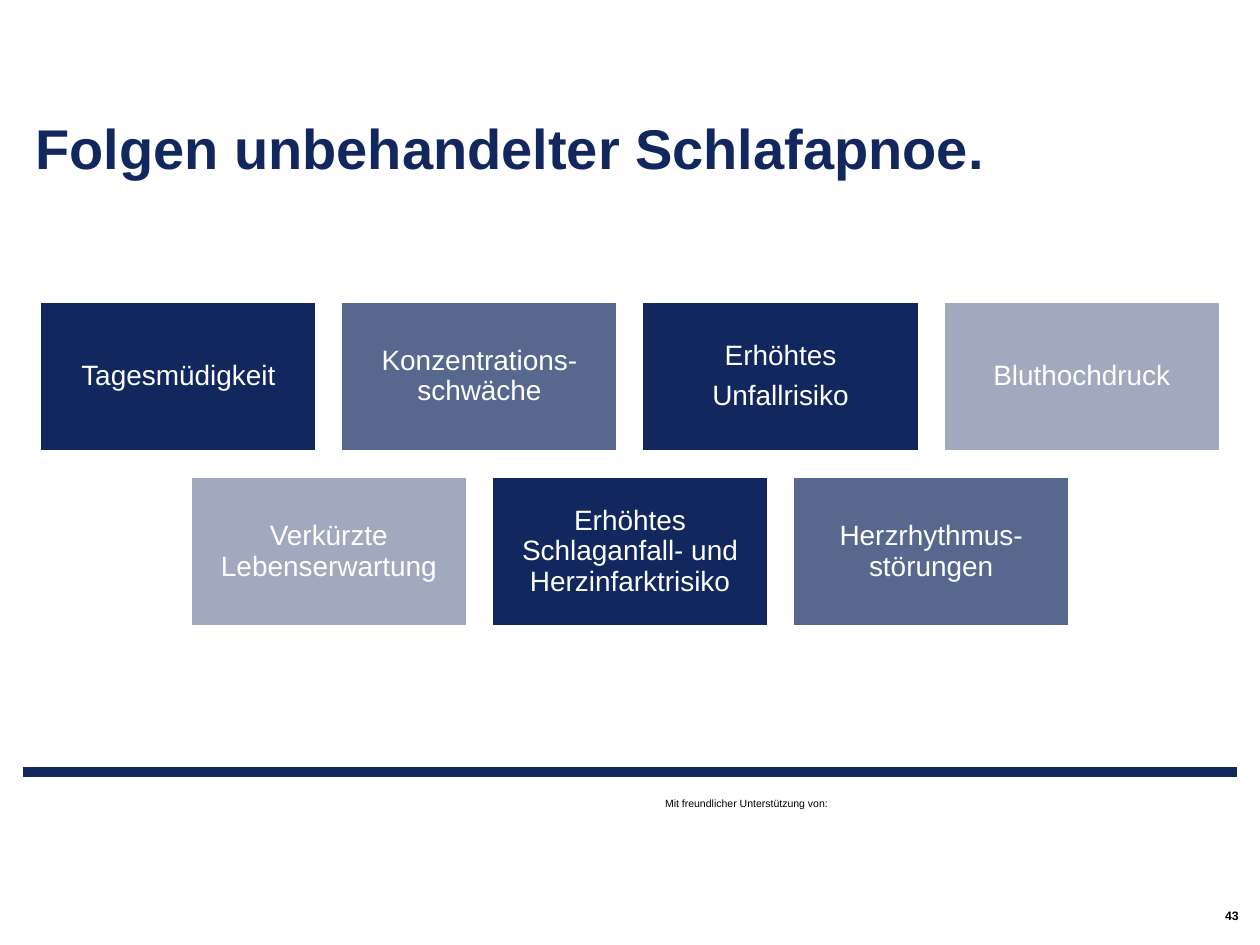
from dataclasses import dataclass

from lxml.etree import SubElement
from pptx import Presentation
from pptx.dml.color import RGBColor
from pptx.enum.shapes import MSO_CONNECTOR, MSO_SHAPE
from pptx.enum.text import MSO_ANCHOR as Anchor, MSO_AUTO_SIZE, PP_ALIGN as Align
from pptx.oxml.ns import qn
from pptx.slide import Slide
from pptx.text.text import TextFrame
from pptx.util import Inches, Pt

NAVY = RGBColor(0x11, 0x27, 0x5D)
SLATE = RGBColor(0x58, 0x67, 0x8D)
MIST = RGBColor(0xA0, 0xA9, 0xBE)
WHITE = RGBColor(0xFF, 0xFF, 0xFF)
BLACK = RGBColor(0, 0, 0)

SLIDE_WIDTH = 10
TILE_WIDTH, TILE_HEIGHT, TILE_GAP = 2.19, 1.18, 0.2


@dataclass(frozen=True)
class Consequence:
    text: str
    fill: RGBColor


@dataclass(frozen=True)
class Row:
    top: float
    consequences: tuple[Consequence, ...]


ROWS = (
    Row(2.4, (
        Consequence("Tagesmüdigkeit", NAVY),
        Consequence("Konzentrations-schwäche", SLATE),
        Consequence("Erhöhtes\nUnfallrisiko", NAVY),
        Consequence("Bluthochdruck", MIST),
    )),
    Row(3.79, (
        Consequence("Verkürzte Lebenserwartung", MIST),
        Consequence("Erhöhtes Schlaganfall- und Herzinfarktrisiko", NAVY),
        Consequence("Herzrhythmus-störungen", SLATE),
    )),
)


def write(frame: TextFrame, text: str, *, size: float, color: RGBColor,
          bold: bool = False, align: Align = Align.LEFT, anchor: Anchor = Anchor.TOP,
          insets: tuple[float, float] = (0.1, 0.05), line_spacing: float = 1.0,
          space_after: float = 0) -> None:
    """Fill a frame, one paragraph a line; insets are horizontal, vertical in inches."""
    frame.text = text
    frame.word_wrap = True
    frame.auto_size = MSO_AUTO_SIZE.NONE
    frame.vertical_anchor = anchor
    frame.margin_left = frame.margin_right = Inches(insets[0])
    frame.margin_top = frame.margin_bottom = Inches(insets[1])
    for paragraph in frame.paragraphs:
        paragraph.alignment = align
        paragraph.line_spacing = line_spacing
        paragraph.space_before = Pt(0)
        paragraph.space_after = Pt(space_after)
        font = paragraph.font
        font.name, font.size, font.bold = "Arial", Pt(size), bold
        font.color.rgb = color


def add_label(slide: Slide, left: float, top: float, width: float, height: float) -> TextFrame:
    return slide.shapes.add_textbox(
        Inches(left), Inches(top), Inches(width), Inches(height)).text_frame


def add_title(slide: Slide, text: str) -> None:
    title = slide.shapes.title
    title.left, title.top = Inches(0.18), Inches(0.39)
    title.width, title.height = Inches(9.65), Inches(1.05)
    write(title.text_frame, text, size=32, color=NAVY, bold=True,
          anchor=Anchor.BOTTOM, insets=(0.1, 0), line_spacing=0.9)


def add_footer_rule(slide: Slide) -> None:
    rule = slide.shapes.add_connector(
        MSO_CONNECTOR.STRAIGHT, Inches(0.18), Inches(6.13), Inches(9.82), Inches(6.13))
    rule.line.color.rgb = NAVY
    rule.line.width = Pt(5.67)
    SubElement(rule._element.spPr, qn("a:effectLst"))


def add_tile(slide: Slide, consequence: Consequence, left: float, top: float) -> None:
    tile = slide.shapes.add_shape(
        MSO_SHAPE.RECTANGLE, Inches(left), Inches(top),
        Inches(TILE_WIDTH), Inches(TILE_HEIGHT))
    tile.shadow.inherit = False
    tile.fill.solid()
    tile.fill.fore_color.rgb = consequence.fill
    tile.line.color.rgb = WHITE
    tile.line.width = Pt(1)
    write(tile.text_frame, consequence.text, size=16, color=WHITE, align=Align.CENTER,
          anchor=Anchor.MIDDLE, insets=(0.07, 0.07), line_spacing=0.9, space_after=5.6)


def add_centred_row(slide: Slide, row: Row) -> None:
    pitch = TILE_WIDTH + TILE_GAP
    start = (SLIDE_WIDTH - len(row.consequences) * pitch + TILE_GAP) / 2
    for column, consequence in enumerate(row.consequences):
        add_tile(slide, consequence, start + column * pitch, row.top)


def main() -> None:
    deck = Presentation()
    deck.slide_width, deck.slide_height = Inches(SLIDE_WIDTH), Inches(7.5)
    slide = deck.slides.add_slide(deck.slide_layouts.get_by_name("Title Only"))

    add_footer_rule(slide)
    write(add_label(slide, 5.18, 6.28, 2.03, 0.2),
          "Mit freundlicher Unterstützung von:", size=6, color=BLACK)
    add_title(slide, "Folgen unbehandelter Schlafapnoe.")
    write(add_label(slide, 6.45, 7.19, 3.38, 0.16), "43", size=7, color=BLACK,
          bold=True, align=Align.RIGHT, anchor=Anchor.MIDDLE, insets=(0, 0))
    for row in ROWS:
        add_centred_row(slide, row)

    deck.save("out.pptx")


if __name__ == "__main__":
    main()
